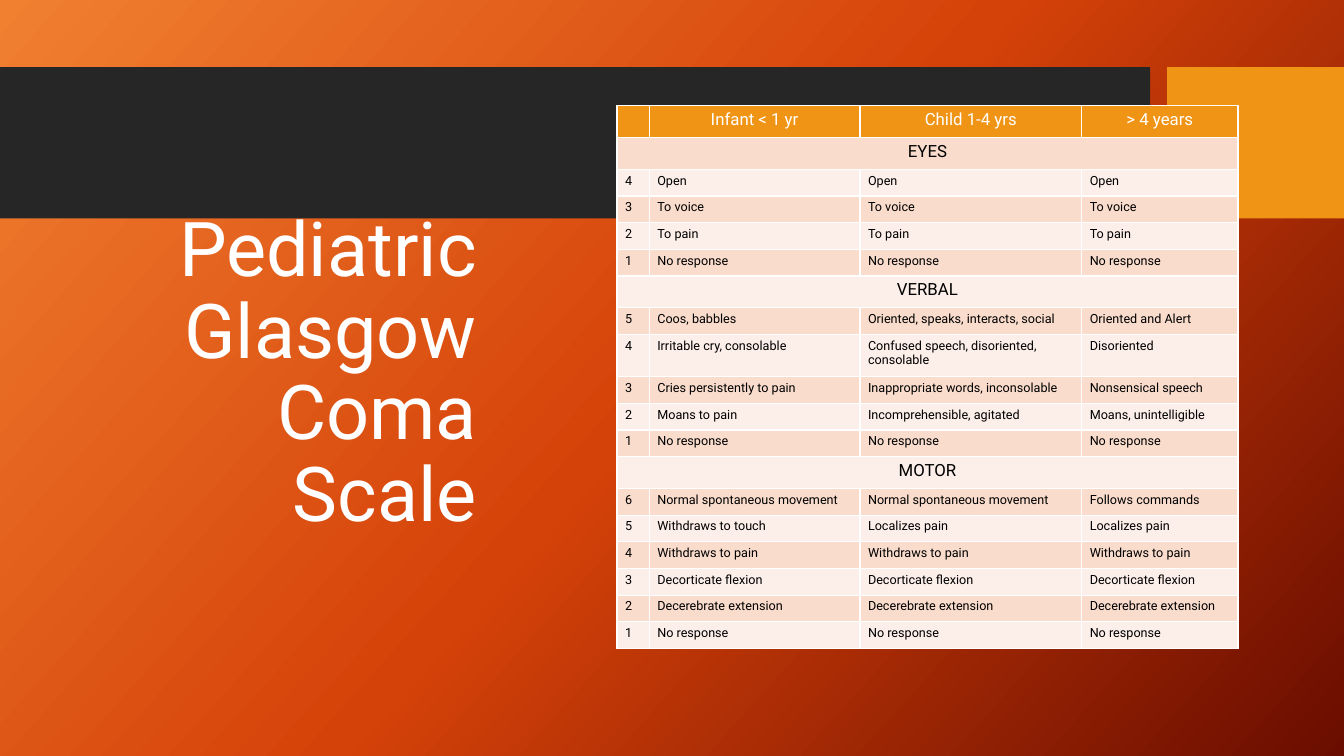
import copy
from dataclasses import dataclass

import lxml.etree
import pptx
import pptx.dml.color
import pptx.enum.shapes
import pptx.enum.text
import pptx.oxml.ns
import pptx.util


@dataclass(frozen=True)
class Theme:
    font: str = "Roboto"
    title_size: int = 54
    heading_size: int = 12
    body_size: int = 9
    white: str = "FFFFFF"
    black: str = "000000"
    charcoal: str = "262626"
    amber: str = "F09415"
    bands: tuple = ("FCEEE8", "F9DCCC")
    backdrop: tuple = ((0, "F18031"), (0.5, "D54209"), (1, "6A0D00"))
    backdrop_angle: int = 318


THEME = Theme()
WIDTH = pptx.util.Inches(13.33)
HEIGHT = pptx.util.Inches(7.5)

COLUMN_SHARES = (2.4, 15.68, 16.5, 11.63)
HEADING_ROW, SCORE_ROW, WRAPPED_ROW = 4.2, 3.53, 5.6
WRAPPED_TEXT = "Confused speech, disoriented, consolable"

SCALE = [
    ("", "Infant < 1 yr", "Child 1-4 yrs", "> 4 years"),
    ("EYES",),
    ("4", "Open", "Open", "Open"),
    ("3", "To voice", "To voice", "To voice"),
    ("2", "To pain", "To pain", "To pain"),
    ("1", "No response", "No response", "No response"),
    ("VERBAL",),
    ("5", "Coos, babbles", "Oriented, speaks, interacts, social", "Oriented and Alert"),
    ("4", "Irritable cry, consolable", WRAPPED_TEXT, "Disoriented"),
    ("3", "Cries persistently to pain", "Inappropriate words, inconsolable", "Nonsensical speech"),
    ("2", "Moans to pain", "Incomprehensible, agitated", "Moans, unintelligible"),
    ("1", "No response", "No response", "No response"),
    ("MOTOR",),
    ("6", "Normal spontaneous movement", "Normal spontaneous movement", "Follows commands"),
    ("5", "Withdraws to touch", "Localizes pain", "Localizes pain"),
    ("4", "Withdraws to pain", "Withdraws to pain", "Withdraws to pain"),
    ("3", "Decorticate flexion", "Decorticate flexion", "Decorticate flexion"),
    ("2", "Decerebrate extension", "Decerebrate extension", "Decerebrate extension"),
    ("1", "No response", "No response", "No response"),
]


def across(percent):
    return round(WIDTH * percent / 100)


def down(percent):
    return round(HEIGHT * percent / 100)


def area(left, top, width, height):
    return across(left), down(top), across(width), down(height)


def color(value):
    return pptx.dml.color.RGBColor.from_string(value)


def paint_background(page):
    fill = page.background.fill
    fill.gradient()
    fill.gradient_angle = THEME.backdrop_angle
    stop_list = page.element.find(".//" + pptx.oxml.ns.qn("a:gsLst"))
    stop_list.append(copy.deepcopy(stop_list[-1]))
    for stop, (position, value) in zip(fill.gradient_stops, THEME.backdrop):
        stop.position = position
        stop.color.rgb = color(value)


def add_block(page, place, value):
    block = page.shapes.add_shape(pptx.enum.shapes.MSO_SHAPE.RECTANGLE, *place)
    block.shadow.inherit = False
    block.fill.solid()
    block.fill.fore_color.rgb = color(value)
    block.line.fill.background()


def format_paragraph(para, size, value, alignment):
    para.alignment = alignment
    para.font.name = THEME.font
    para.font.size = pptx.util.Pt(size)
    para.font.color.rgb = color(value)


def place_title(page, place, text):
    title = page.shapes.title
    title.left, title.top, title.width, title.height = place
    frame = title.text_frame
    frame.text = text
    frame.word_wrap = True
    frame.auto_size = pptx.enum.text.MSO_AUTO_SIZE.NONE
    frame.vertical_anchor = pptx.enum.text.MSO_ANCHOR.MIDDLE
    para = frame.paragraphs[0]
    para.line_spacing = 0.9
    format_paragraph(para, THEME.title_size, THEME.white, pptx.enum.text.PP_ALIGN.RIGHT)
    page.shapes.element.append(title.element)


def add_borders(cell):
    qn = pptx.oxml.ns.qn
    properties = cell._tc.get_or_add_tcPr()
    for side in ("a:lnL", "a:lnR", "a:lnT", "a:lnB"):
        line = lxml.etree.SubElement(properties, qn(side), w=str(pptx.util.Pt(1)))
        fill = lxml.etree.SubElement(line, qn("a:solidFill"))
        lxml.etree.SubElement(fill, qn("a:srgbClr"), val=THEME.white)


def format_cell(cell, text, fill, size, value, alignment):
    add_borders(cell)
    cell.fill.solid()
    cell.fill.fore_color.rgb = color(fill)
    cell.margin_left = cell.margin_right = pptx.util.Inches(0.08)
    cell.margin_top = cell.margin_bottom = pptx.util.Inches(0.04)
    cell.text = text
    format_paragraph(cell.text_frame.paragraphs[0], size, value, alignment)


def row_share(entries, is_heading):
    if is_heading:
        return HEADING_ROW
    return WRAPPED_ROW if WRAPPED_TEXT in entries else SCORE_ROW


def add_scale_table(page, place):
    columns = len(COLUMN_SHARES)
    table = page.shapes.add_table(len(SCALE), columns, *place).table
    for column, share in zip(table.columns, COLUMN_SHARES):
        column.width = across(share)
    for index, entries in enumerate(SCALE):
        is_header = index == 0
        is_section = len(entries) == 1
        is_heading = is_header or is_section
        table.rows[index].height = down(row_share(entries, is_heading))
        fill = THEME.amber if is_header else THEME.bands[index % 2]
        size = THEME.heading_size if is_heading else THEME.body_size
        value = THEME.white if is_header else THEME.black
        align = pptx.enum.text.PP_ALIGN
        alignment = align.CENTER if is_heading else align.LEFT
        if is_section:
            table.cell(index, 0).merge(table.cell(index, columns - 1))
        for position in range(columns):
            text = entries[position] if position < len(entries) else ""
            format_cell(table.cell(index, position), text, fill, size, value, alignment)


def main():
    deck = pptx.Presentation()
    deck.slide_width, deck.slide_height = WIDTH, HEIGHT
    page = deck.slides.add_slide(deck.slide_layouts.get_by_name("Title Only"))
    paint_background(page)
    add_block(page, area(0, 8.89, 85.58, 20), THEME.charcoal)
    add_block(page, area(86.85, 8.89, 13.15, 20), THEME.amber)
    place_title(page, area(5.55, 30.13, 30.68, 38.8), "Pediatric Glasgow Coma Scale")
    add_scale_table(page, area(45.91, 14, sum(COLUMN_SHARES), 72))
    deck.save("out.pptx")


if __name__ == "__main__":
    main()
